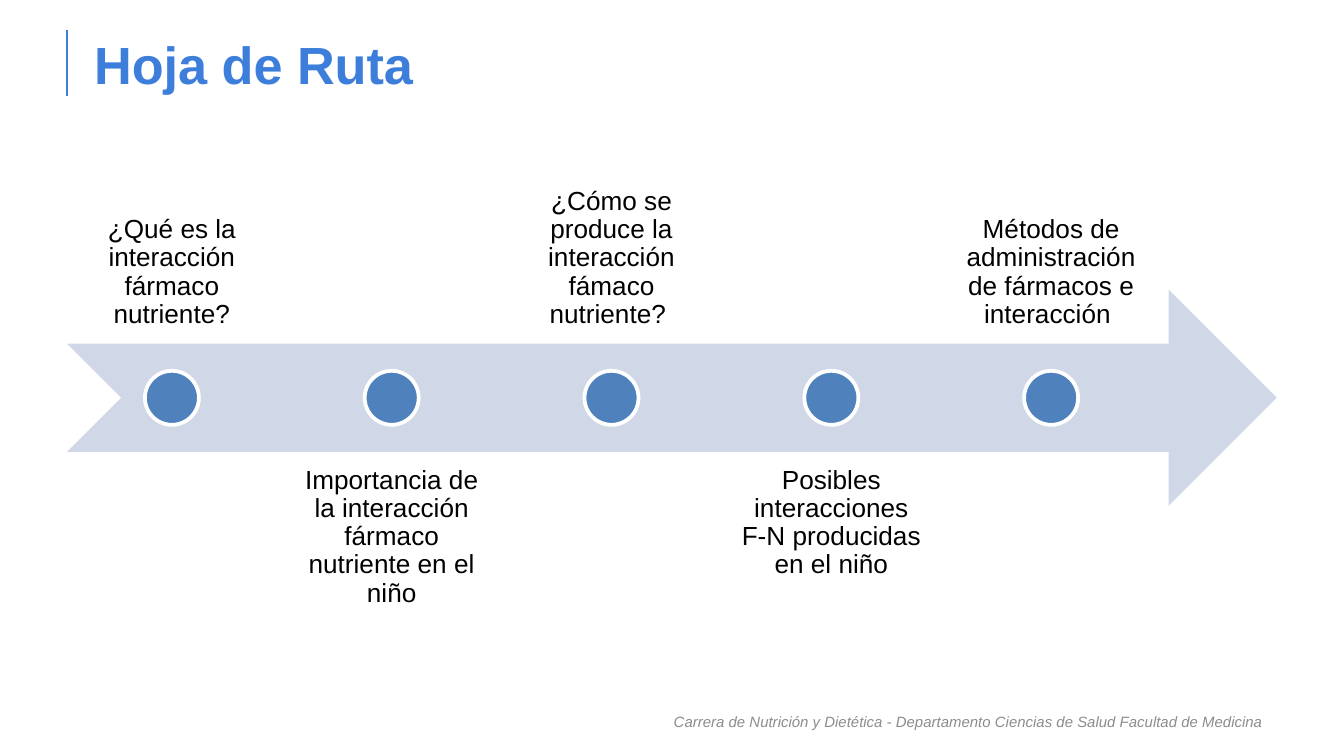
import pptx
import pptx.dml.color
import pptx.enum.shapes
import pptx.enum.text
import pptx.oxml.ns
import pptx.util
from lxml import etree

SLIDE_WIDTH = 10
SLIDE_HEIGHT = SLIDE_WIDTH * 9 / 16
MARGIN = 0.05 * SLIDE_WIDTH
CONTENT_WIDTH = SLIDE_WIDTH - 2 * MARGIN
BLUE, ARROW_FILL, DOT_FILL = "3D7EDB", "D0D8E8", "4F81BD"
WHITE, BLACK, GREY = "FFFFFF", "000000", "8C8C8C"

STEPS = [
    "¿Qué es la interacción fármaco nutriente?",
    "Importancia de la interacción fármaco nutriente en el niño",
    "¿Cómo se produce la interacción fámaco nutriente? ",
    "Posibles interacciones F-N producidas en el niño",
    "Métodos de administración de fármacos e interacción ",
]

ALIGN = pptx.enum.text.PP_ALIGN
ANCHOR = pptx.enum.text.MSO_ANCHOR
SHAPE = pptx.enum.shapes.MSO_SHAPE


def inches(*lengths):
    return [pptx.util.Inches(length) for length in lengths]


def color(hex_code):
    return pptx.dml.color.RGBColor.from_string(hex_code)


def write_text(shape, text, hex_code, insets, anchor, align, spacing=1.0, **font_format):
    frame = shape.text_frame
    frame.text = text
    left, top, right, bottom = inches(*insets)
    frame_format = {
        "word_wrap": True, "auto_size": pptx.enum.text.MSO_AUTO_SIZE.NONE,
        "vertical_anchor": anchor, "margin_left": left, "margin_top": top,
        "margin_right": right, "margin_bottom": bottom,
    }
    for name, value in frame_format.items():
        setattr(frame, name, value)
    paragraph = frame.paragraphs[0]
    paragraph.alignment = align
    paragraph.line_spacing = spacing
    font = paragraph.runs[0].font
    for name, value in {"name": "Arial", **font_format}.items():
        setattr(font, name, value)
    font.color.rgb = color(hex_code)


def add_filled_shape(slide, kind, box, fill, outline=None):
    shape = slide.shapes.add_shape(kind, *inches(*box))
    shape.shadow.inherit = False
    shape.fill.solid()
    shape.fill.fore_color.rgb = color(fill)
    if outline:
        shape.line.color.rgb = color(outline)
        shape.line.width = pptx.util.Pt(2)
    else:
        shape.line.fill.background()


def build_title(slide, box):
    left, top, width, height = box
    # Accent rule beside the title
    rule = slide.shapes.add_connector(
        pptx.enum.shapes.MSO_CONNECTOR.STRAIGHT, *inches(left, top, left, top + height))
    rule.line.color.rgb = color(BLUE)
    rule.line.width = pptx.util.Pt(1)
    properties = rule.element.find(pptx.oxml.ns.qn("p:spPr"))
    etree.SubElement(properties, pptx.oxml.ns.qn("a:effectLst"))
    # Title placeholder
    title = slide.shapes.title
    title.left, title.top, title.width, title.height = inches(*box)
    write_text(title, "Hoja de Ruta", BLUE, (0.2, 0.12, 0.1, 0.12), ANCHOR.MIDDLE,
               ALIGN.LEFT, size=pptx.util.Pt(28), bold=True)


def build_timeline(slide, box, steps):
    left, top, width, height = box
    row = 0.4 * height
    middle = top + height / 2
    # Columns fill 90 % of the width, with gaps of 5 % of a column
    gap_share = 0.05
    column = 0.9 * width / (len(steps) + gap_share * (len(steps) - 1))
    dot = row / 4

    add_filled_shape(slide, SHAPE.NOTCHED_RIGHT_ARROW,
                     (left, middle - row / 2, width, row), ARROW_FILL)
    for index, step in enumerate(steps):
        column_left = left + index * column * (1 + gap_share)
        above = index % 2 == 0
        label_top = top if above else top + height - row
        # Labels alternate above and below the arrow
        label = slide.shapes.add_textbox(*inches(column_left, label_top, column, row))
        write_text(label, step, BLACK, (0.11,) * 4,
                   ANCHOR.BOTTOM if above else ANCHOR.TOP, ALIGN.CENTER,
                   spacing=0.9, size=pptx.util.Pt(14))
        add_filled_shape(slide, SHAPE.OVAL,
                         (column_left + (column - dot) / 2, middle - dot / 2, dot, dot),
                         DOT_FILL, WHITE)


def build_footer(slide, box):
    footer = slide.shapes.add_textbox(*inches(*box))
    write_text(footer,
               "Carrera de Nutrición y Dietética - Departamento Ciencias de Salud "
               "Facultad de Medicina",
               GREY, (0.1, 0.12, 0.1, 0.12), ANCHOR.MIDDLE, ALIGN.RIGHT,
               size=pptx.util.Pt(8), italic=True)


def main():
    presentation = pptx.Presentation()
    presentation.slide_width, presentation.slide_height = inches(SLIDE_WIDTH, SLIDE_HEIGHT)
    slide = presentation.slides.add_slide(presentation.slide_layouts[5])
    build_title(slide, (MARGIN, 0.04 * SLIDE_HEIGHT, CONTENT_WIDTH, 0.49))
    build_timeline(slide, (MARGIN, 0.95, CONTENT_WIDTH, 4.02), STEPS)
    build_footer(slide, (MARGIN, 5.22, CONTENT_WIDTH, 0.3))
    presentation.save("out.pptx")


if __name__ == "__main__":
    main()
